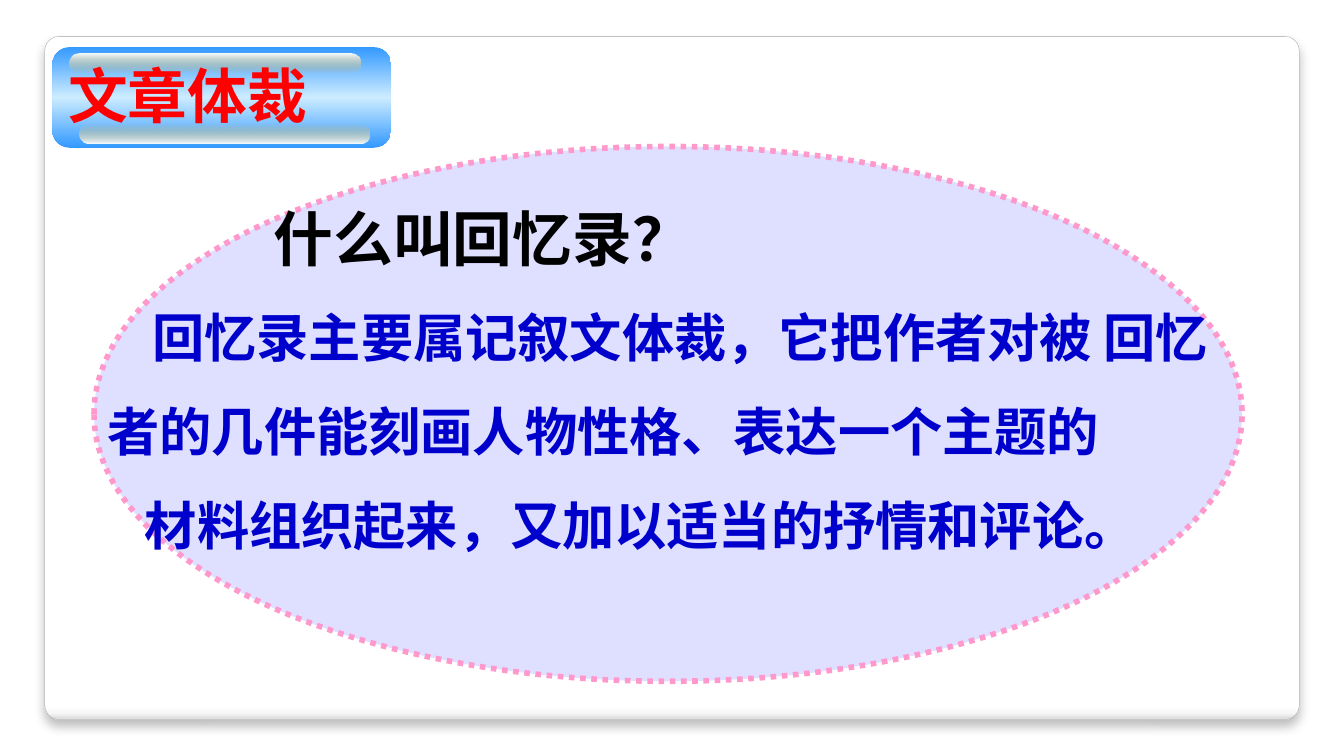
import pptx
import pptx.dml.color
import pptx.enum.dml
import pptx.enum.shapes
import pptx.enum.text
import pptx.oxml.ns
import pptx.util
from lxml import etree

Pt = pptx.util.Pt
qn = pptx.oxml.ns.qn
FONT = "Noto Sans CJK SC"


def color(value):
    return pptx.dml.color.RGBColor.from_string(value)


def add_color(parent, value, alpha=100):
    node = etree.SubElement(parent, qn("a:srgbClr"), val=value)
    if alpha < 100:
        etree.SubElement(node, qn("a:alpha"), val=str(alpha * 1000))


def add_shadow(parent, value, alpha, blur, distance, angle):
    effects = parent.find(qn("a:effectLst"))
    if effects is None:
        effects = etree.SubElement(parent, qn("a:effectLst"))
    shadow = etree.SubElement(
        effects, qn("a:outerShdw"), blurRad=str(Pt(blur)), dist=str(Pt(distance)),
        dir=str(angle * 60000), algn="ctr", rotWithShape="0")
    add_color(shadow, value, alpha)


def add_box(page, kind, box, radius=None):
    shape = page.shapes.add_shape(kind, *[Pt(length) for length in box])
    shape.shadow.inherit = False
    shape.line.fill.background()
    if radius is not None:
        shape.adjustments[0] = radius
    return shape


def add_gradient_box(page, box, radius, stops):
    kind = pptx.enum.shapes.MSO_SHAPE.ROUNDED_RECTANGLE
    shape = add_box(page, kind, box, radius)
    shape.fill.gradient()
    shape.fill.gradient_angle = 270
    stop_list = shape.element.spPr.find(".//" + qn("a:gsLst"))
    for old_stop in list(stop_list):
        stop_list.remove(old_stop)
    for position, value, alpha in stops:
        stop = etree.SubElement(stop_list, qn("a:gs"), pos=str(position * 1000))
        add_color(stop, value, alpha)
    return shape


def place_text(holder, box, top_inset):
    parent = holder.element.getparent()
    parent.append(holder.element)
    holder.left, holder.top, holder.width, holder.height = [Pt(length) for length in box]
    frame = holder.text_frame
    frame.word_wrap = True
    frame.auto_size = pptx.enum.text.MSO_AUTO_SIZE.NONE
    frame.vertical_anchor = pptx.enum.text.MSO_ANCHOR.TOP
    frame.margin_left = frame.margin_right = Pt(7.2)
    frame.margin_top, frame.margin_bottom = Pt(top_inset), Pt(0)
    return frame


def write_paragraph(para, text, size, value, indent, spacing):
    para.text = text
    para.alignment = pptx.enum.text.PP_ALIGN.LEFT
    para.line_spacing = Pt(spacing)
    para.space_before = para.space_after = Pt(0)
    properties = para._p.get_or_add_pPr()
    properties.set("marL", "0")
    properties.set("indent", str(Pt(indent)))
    etree.SubElement(properties, qn("a:buNone"))
    para.font.size = Pt(size)
    para.font.bold = True
    para.font.color.rgb = color(value)
    para.font.name = FONT
    character = properties.find(qn("a:defRPr"))
    etree.SubElement(character, qn("a:ea"), typeface=FONT)
    return character


def add_card(page, box):
    stops = [(0, "FFFFFF", 100), (98, "FFFFFF", 100), (99, "F7F7F7", 100), (100, "DADADA", 100)]
    card = add_gradient_box(page, box, 0.021, stops)
    card.line.color.rgb = color("A4A4A4")
    card.line.width = Pt(0.16)
    add_shadow(card.element.spPr, "000000", 25, 6, 4, 90)


def add_heading(page, box):
    left, top, width, height = box
    add_gradient_box(page, box, 0.175, [
        (0, "3399FF", 100), (50, "CCECFF", 100), (100, "3399FF", 100)])
    clear, white = ("E0AD2E", 0), ("FFFFFF", 100)
    for x, y, first, last in ((14.4, 41.8, clear, white), (9.4, 3.6, white, clear)):
        add_gradient_box(page, (left + x, top + y, 155.5, 10.1), 0.5, [(0, *first), (100, *last)])
    frame = place_text(page.shapes.title, (left - 5.8, top, 179.3, 49.7), 3.6)
    character = write_paragraph(frame.paragraphs[0], "文章体裁", 32, "FF0000", 7, 41)
    effects = etree.Element(qn("a:effectLst"))
    character.find(qn("a:latin")).addprevious(effects)
    add_shadow(character, "C0C0C0", 100, 0, 2, 45)


def add_definition(page, box):
    left, top, width, height = box
    oval = add_box(page, pptx.enum.shapes.MSO_SHAPE.OVAL, box)
    oval.fill.solid()
    oval.fill.fore_color.rgb = color("CCCCFF")
    fill_color = oval.element.spPr.find(qn("a:solidFill")).find(qn("a:srgbClr"))
    etree.SubElement(fill_color, qn("a:alpha"), val="62000")
    oval.line.color.rgb = color("FF99CC")
    oval.line.width = Pt(3)
    oval.line.dash_style = pptx.enum.dml.MSO_LINE.ROUND_DOT
    frame = place_text(page.placeholders[1], (left, top + 3.6, width - 1.4, 218.2), 14)
    lines = [
        ("什么叫回忆录？", 32, "000000", 89),
        ("回忆录主要属记叙文体裁，它把作者对被 回忆者的几件能刻画人物性格、表达一个主题的",
         28, "0000CC", 24),
        ("材料组织起来，又加以适当的抒情和评论。", 28, "0000CC", 20),
    ]
    for index, (text, size, value, indent) in enumerate(lines):
        para = frame.add_paragraph() if index else frame.paragraphs[0]
        write_paragraph(para, text, size, value, indent, 50.4)


def main():
    deck = pptx.Presentation()
    deck.slide_width, deck.slide_height = Pt(720), Pt(405)
    page = deck.slides.add_slide(deck.slide_layouts[1])
    add_card(page, (24, 19.5, 672, 366))
    add_heading(page, (28.1, 25.2, 181.4, 54))
    add_definition(page, (50.4, 78.5, 615, 286.5))
    deck.save("out.pptx")


if __name__ == "__main__":
    main()
